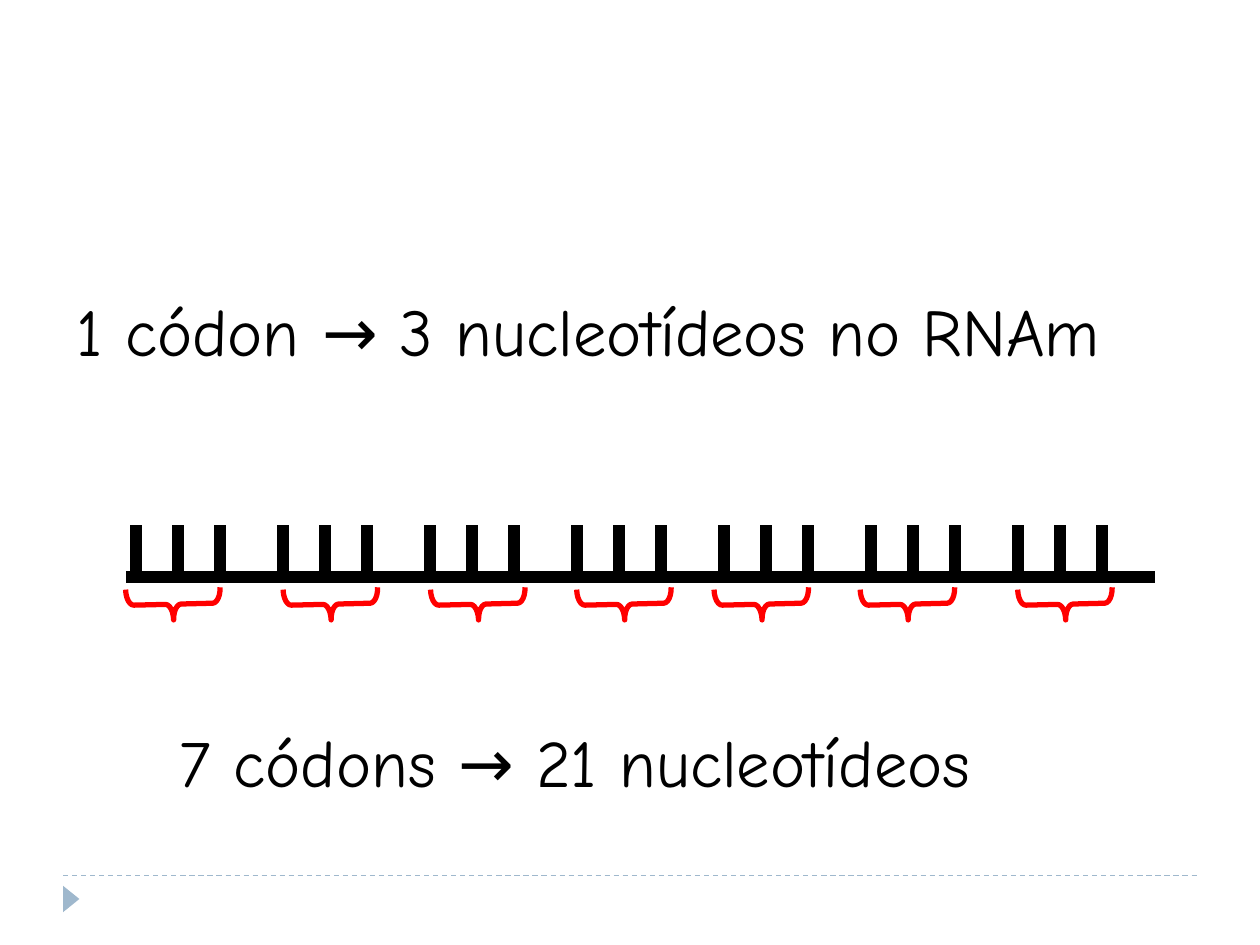
from lxml import etree
from pptx import Presentation
from pptx.dml.color import RGBColor
from pptx.enum.dml import MSO_LINE
from pptx.enum.shapes import MSO_CONNECTOR, MSO_SHAPE
from pptx.enum.text import MSO_AUTO_SIZE
from pptx.oxml.ns import qn
from pptx.util import Inches, Pt

STRAIGHT = MSO_CONNECTOR.STRAIGHT
BRACE = MSO_SHAPE.LEFT_BRACE
TRIANGLE = MSO_SHAPE.ISOSCELES_TRIANGLE
DASH = MSO_LINE.DASH
GROW = MSO_AUTO_SIZE.SHAPE_TO_FIT_TEXT

COLORS = {"ink": "000000", "red": "FF0000", "trim": "9FB8CD"}
CODONS, BASES = 7, 3
PITCH, STEP = 7 / 6, 1 / 3
TOP, STRAND = 4.17, 4.58
BRACES = (1.25, 2.5, 3.67, 4.83, 5.92, 7.08, 8.33)


class Board:
    """Draws styled elements on the current slide."""

    def __init__(self, slide, font="Comic Neue", size=38):
        self.shapes = slide.shapes
        self.font = font
        self.size = size

    def color(self, name):
        return RGBColor.from_string(COLORS[name])

    def line(self, x1, y1, x2, y2, color="ink", width=7, dash=None):
        line = self.shapes.add_connector(
            STRAIGHT, Inches(x1), Inches(y1), Inches(x2), Inches(y2))
        line.line.color.rgb = self.color(color)
        line.line.width = Pt(width)
        line.line.dash_style = dash
        etree.SubElement(line._element.spPr, qn("a:effectLst"))

    def shape(self, kind, x, y, w, h, turn):
        shape = self.shapes.add_shape(
            kind, Inches(x), Inches(y), Inches(w), Inches(h))
        shape.rotation = turn
        shape.shadow.inherit = False
        return shape

    def marker(self, x, y, w, h):
        mark = self.shape(TRIANGLE, x, y, w, h, 90)
        mark.fill.solid()
        mark.fill.fore_color.rgb = self.color("trim")
        mark.line.fill.background()

    def brace(self, x, y, w, h):
        brace = self.shape(BRACE, x, y, w, h, 268.6)
        brace.adjustments[0] = 0.25
        brace.fill.background()
        brace.line.color.rgb = self.color("red")
        brace.line.width = Pt(3)

    def text(self, text, x, y, w, h):
        frame = self.shapes.add_textbox(
            Inches(x), Inches(y), Inches(w), Inches(h)).text_frame
        frame.word_wrap = True
        frame.auto_size = GROW
        para = frame.paragraphs[0]
        para.text = text
        para.font.name = self.font
        para.font.size = Pt(self.size)
        para.font.color.rgb = self.color("ink")


def main():
    deck = Presentation()
    deck.slide_width, deck.slide_height = Inches(10), Inches(7.5)
    board = Board(deck.slides.add_slide(deck.slide_layouts[6]))

    board.line(0.5, 6.95, 9.5, 6.95, "trim", 0.75, DASH)
    board.marker(0.46, 7.07, 0.21, 0.13)

    board.line(1, STRAND, 9.17, STRAND)
    for codon in range(CODONS):
        for base in range(BASES):
            x = 1.08 + codon * PITCH + base * STEP
            board.line(x, TOP, x, STRAND)
    for x in BRACES:
        board.brace(x, 4.42, 0.25, 0.75)

    board.text("1 códon → 3 nucleotídeos no RNAm", 0.51, 2.25, 8.88, 0.73)
    board.text("7 códons → 21 nucleotídeos", 1.33, 5.67, 7.25, 0.73)
    deck.save("out.pptx")


if __name__ == "__main__":
    main()
